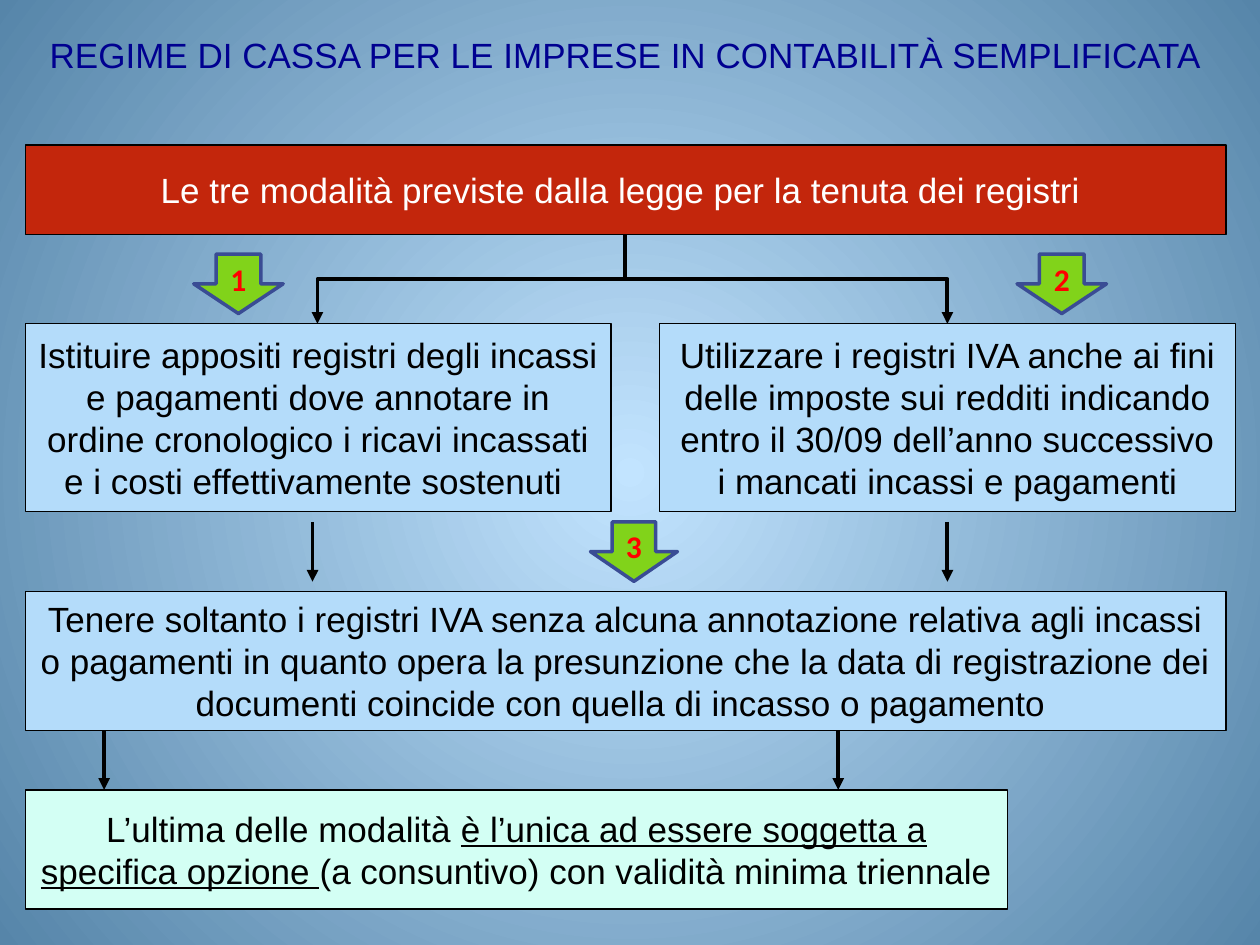
from dataclasses import dataclass

from lxml.etree import SubElement
from pptx import Presentation
from pptx.dml.color import RGBColor
from pptx.enum.shapes import MSO_CONNECTOR, MSO_SHAPE
from pptx.enum.text import MSO_ANCHOR, PP_ALIGN
from pptx.oxml.ns import qn
from pptx.util import Pt

COLORS = {
    "glow": "C2E4FF", "edge": "5685A9", "title": "000090",
    "black": "000000", "white": "FFFFFF", "red": "FF0000",
    "header": "C3260C", "option": "B4DCFA", "note": "D3FFF4",
    "arrow": "81D31A", "arrow_line": "3A4C94",
}
BODY_FONT = {"name": "Arial", "size": Pt(20), "bold": False}
NUMBER_FONT = {"name": "Calibri", "size": Pt(18), "bold": True}
FRAME_FORMAT = {"word_wrap": True, "vertical_anchor": MSO_ANCHOR.MIDDLE}
LEFT = 14.4
FULL_WIDTH = 686.2


@dataclass
class Box:
    """A bordered panel; every second text piece is underlined."""
    left: float
    top: float
    width: float
    height: float
    fill: str
    pieces: tuple[str, ...]
    text_color: str = "black"


@dataclass
class NumberArrow:
    left: float
    top: float
    number: str
    width: float = 51.1


@dataclass
class Link:
    begin_x: float
    begin_y: float
    end_x: float
    end_y: float


BOXES = [
    Box(LEFT, 82.8, FULL_WIDTH, 51.1, "header",
        ("Le tre modalità previste dalla legge per la tenuta dei registri ",), "white"),
    Box(LEFT, 185, 334.8, 107.5, "option",
        ("Istituire appositi registri degli incassi e pagamenti dove annotare in ordine "
         "cronologico i ricavi incassati e i costi effettivamente sostenuti ",)),
    Box(377, 185, 329, 107.5, "option",
        ("Utilizzare i registri IVA anche ai fini delle imposte sui redditi indicando "
         "entro il 30/09 dell’anno successivo i mancati incassi e pagamenti",)),
    Box(LEFT, 337.9, FULL_WIDTH, 79.4, "option",
        ("Tenere soltanto i registri IVA senza alcuna annotazione relativa agli incassi "
         "o pagamenti in quanto opera la presunzione che la data di registrazione dei "
         "documenti coincide con quella di incasso o pagamento ",)),
    Box(LEFT, 451.4, 561.4, 68, "note",
        ("L’ultima delle modalità ", "è l’unica ad essere soggetta a specifica opzione ",
         "(a consuntivo) con validità minima triennale ")),
]
NUMBER_ARROWS = [
    NumberArrow(110.7, 145.2, "1"),
    NumberArrow(581.2, 145.2, "2"),
    NumberArrow(337.4, 298.2, "3", 49.7),
]
BRANCHES = [Link(357.1, 133.9, end_x, 185) for end_x in (181.4, 541.4)]
DROPS = [
    Link(x, top, x, bottom)
    for top, bottom, columns in ((298.2, 332.4, (178.6, 541.4)),
                                 (417.4, 451.4, (59.5, 479)))
    for x in columns
]


def color(name: str) -> RGBColor:
    return RGBColor.from_string(COLORS[name])


def apply(target, values: dict) -> None:
    for attribute, value in values.items():
        setattr(target, attribute, value)


def write_text(shape, pieces: tuple[str, ...], font: dict, text_color: str) -> None:
    apply(shape.text_frame, FRAME_FORMAT)
    paragraph = shape.text_frame.paragraphs[0]
    apply(paragraph, {"alignment": PP_ALIGN.CENTER, "line_spacing": Pt(24)})
    for index, piece in enumerate(pieces):
        run = paragraph.add_run()
        run.text = piece
        apply(run.font, font)
        run.font.underline = index % 2 == 1
        run.font.color.rgb = color(text_color)


def add_filled_shape(slide, kind, left: float, top: float, width: float, height: float,
                     fill: str, line: str, line_width: float):
    shape = slide.shapes.add_shape(kind, Pt(left), Pt(top), Pt(width), Pt(height))
    shape.shadow.inherit = False
    shape.fill.solid()
    shape.fill.fore_color.rgb = color(fill)
    shape.line.color.rgb = color(line)
    shape.line.width = Pt(line_width)
    return shape


def add_box(slide, box: Box) -> None:
    shape = add_filled_shape(slide, MSO_SHAPE.RECTANGLE, box.left, box.top,
                             box.width, box.height, box.fill, "black", 0.75)
    write_text(shape, box.pieces, BODY_FONT, box.text_color)


def add_number_arrow(slide, arrow: NumberArrow) -> None:
    shape = add_filled_shape(slide, MSO_SHAPE.DOWN_ARROW, arrow.left, arrow.top,
                             arrow.width, 34, "arrow", "arrow_line", 2)
    write_text(shape, (arrow.number,), NUMBER_FONT, "red")


def add_link(slide, link: Link, kind=MSO_CONNECTOR.STRAIGHT):
    connector = slide.shapes.add_connector(
        kind, Pt(link.begin_x), Pt(link.begin_y), Pt(link.end_x), Pt(link.end_y))
    connector.line.color.rgb = color("black")
    connector.line.width = Pt(2.25)
    SubElement(connector.line._get_or_add_ln(), qn("a:tailEnd"), type="triangle")
    SubElement(connector._element.spPr, qn("a:effectLst"))
    return connector


def add_branch(slide, link: Link) -> None:
    """Draw an elbow that leaves downwards: a sideways elbow turned a quarter."""
    center_x = (link.begin_x + link.end_x) / 2
    center_y = (link.begin_y + link.end_y) / 2
    half_span = abs(link.end_x - link.begin_x) / 2
    goes_left = link.end_x < link.begin_x
    half_drop = (link.end_y - link.begin_y) / 2 * (1 if goes_left else -1)
    turned = Link(center_x - half_drop, center_y - half_span,
                  center_x + half_drop, center_y + half_span)
    connector = add_link(slide, turned, MSO_CONNECTOR.ELBOW)
    transform = connector._element.spPr.find(qn("a:xfrm"))
    transform.set("rot", str((90 if goes_left else 270) * 60000))


def set_radial_background(slide) -> None:
    fill = slide.background.fill
    fill.gradient()
    for stop, name, position in zip(fill.gradient_stops, ("glow", "edge"), (0, 1)):
        stop.color.rgb = color(name)
        stop.position = position
    gradient = next(slide.element.iter(qn("a:gradFill")))
    gradient.remove(gradient.find(qn("a:lin")))
    circle = SubElement(gradient, qn("a:path"), path="circle")
    SubElement(circle, qn("a:fillToRect"), {side: "50000" for side in "ltrb"})


def main() -> None:
    presentation = Presentation()
    apply(presentation, {"slide_width": Pt(720), "slide_height": Pt(540)})
    slide = presentation.slides.add_slide(presentation.slide_layouts[5])
    set_radial_background(slide)

    title = slide.shapes.title
    apply(title, {"left": Pt(8.6), "top": Pt(14.4), "width": Pt(697.7), "height": Pt(33.8)})
    write_text(title, ("REGIME DI CASSA PER LE IMPRESE IN CONTABILITÀ SEMPLIFICATA",),
               BODY_FONT, "title")

    for box in BOXES:
        add_box(slide, box)
    for branch in BRANCHES:
        add_branch(slide, branch)
    for drop in DROPS:
        add_link(slide, drop)
    for arrow in NUMBER_ARROWS:
        add_number_arrow(slide, arrow)

    presentation.save("out.pptx")


if __name__ == "__main__":
    main()
